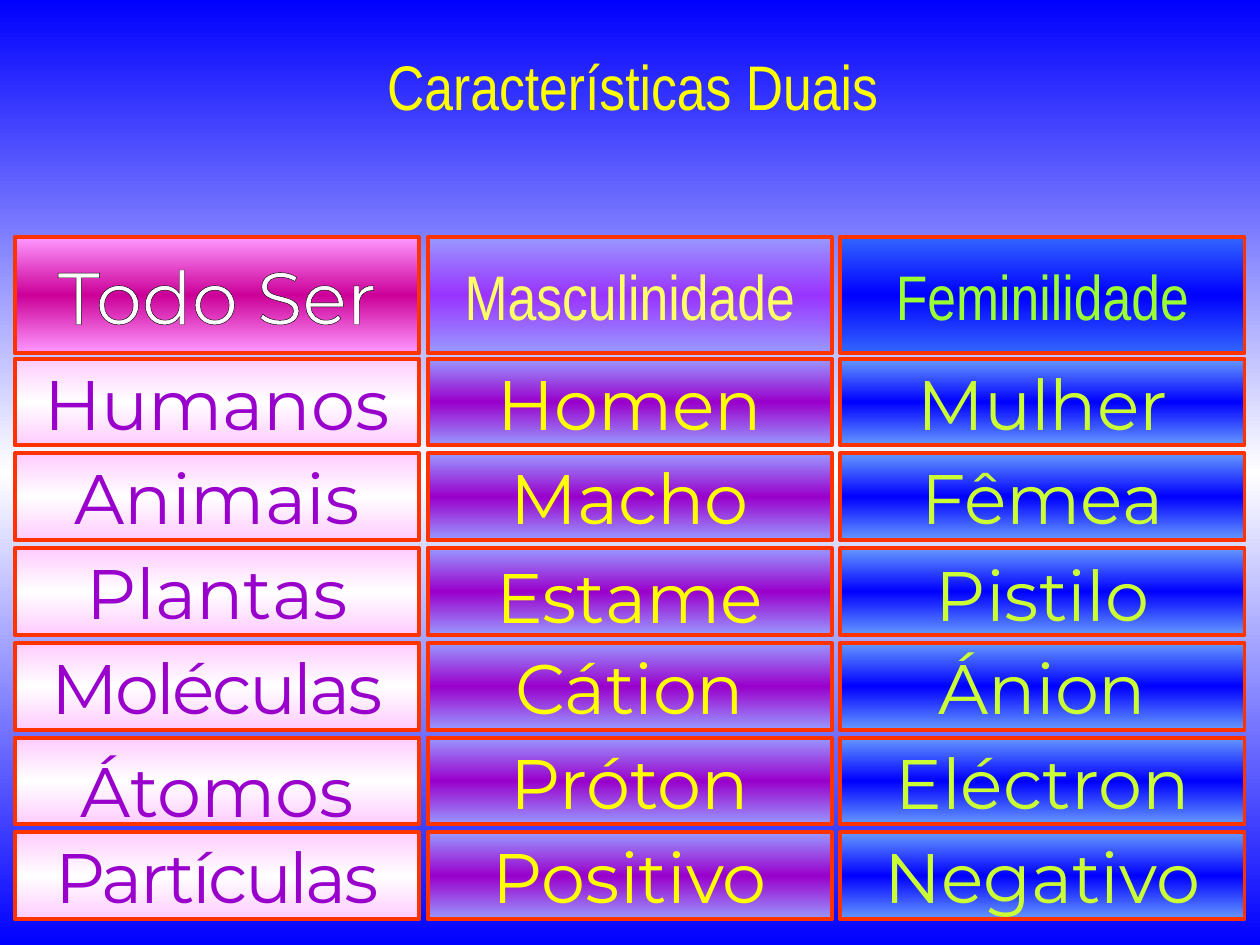
"""Build a slide with a table-like grid of dual characteristics."""
from copy import deepcopy
from pptx import Presentation
from pptx.dml.color import RGBColor as RGB
from pptx.enum.shapes import MSO_SHAPE as SHAPE
from pptx.enum.text import MSO_ANCHOR as ANCHOR, PP_ALIGN as ALIGN
from pptx.oxml import parse_xml
from pptx.oxml.ns import nsdecls, qn
from pptx.util import Cm, Pt

BLUE = RGB(0x00, 0x00, 0xFF)
NAVY = RGB(0x00, 0x00, 0x99)
WHITE = RGB(0xFF, 0xFF, 0xFF)
BLACK = RGB(0x00, 0x00, 0x00)
RED = RGB(0xFF, 0x33, 0x00)
ORANGE = RGB(0xFF, 0x99, 0x33)
YELLOW = RGB(0xFF, 0xFF, 0x00)
CREAM = RGB(0xFF, 0xFF, 0x66)
LIME = RGB(0xCC, 0xFF, 0x33)
GREEN = RGB(0x99, 0xFF, 0x33)
PURPLE = RGB(0x99, 0x00, 0xCC)
VIOLET = RGB(0x99, 0x33, 0xFF)
LILAC = RGB(0x99, 0x99, 0xFF)
BLUSH = RGB(0xFF, 0xCC, 0xFF)
PINK = RGB(0xFF, 0x99, 0xFF)
ROSE = RGB(0xCC, 0x00, 0x99)
SKY = RGB(0x66, 0x99, 0xFF)
ROYAL = RGB(0x33, 0x66, 0xFF)

SANS, SLIM = "Montserrat", "Arial Narrow"
HEADS = [
    ("Todo Ser", SANS, 42, WHITE, PINK, ROSE),
    ("Masculinidade", SLIM, 36, CREAM, LILAC, VIOLET),
    ("Feminilidade", SLIM, 36, GREEN, ROYAL, BLUE),
]
STYLES = [(PURPLE, BLUSH, WHITE), (YELLOW, LILAC, PURPLE), (LIME, SKY, BLUE)]
ROWS = [
    ("Humanos", "Homen", "Mulher"),
    ("Animais", "Macho", "Fêmea"),
    ("Plantas", "Estame", "Pistilo"),
    ("Moléculas", "Cátion", "Ánion"),
    ("Átomos", "Próton", "Eléctron"),
    ("Partículas", "Positivo", "Negativo"),
]
SPACING = {"Átomos": 1.2, "Estame": 1.1, "Pistilo": 1.05}
TIGHT = ("Moléculas", "Partículas")


def blend(fill, root, edge, core):
    fill.gradient()
    fill.gradient_angle = 270
    first = next(root.iter(qn("a:gs")))
    first.addnext(deepcopy(first))
    for stop, (pos, tint) in zip(fill.gradient_stops, [(0, edge), (0.5, core), (1, edge)]):
        stop.position = pos
        stop.color.rgb = tint


def write(box, text, face, size, ink, rim, width):
    frame = box.text_frame
    frame.text = text
    frame.word_wrap = False
    para = frame.paragraphs[0]
    para.alignment = ALIGN.CENTER
    run = para.runs[0]
    run.font.name = face
    run.font.size = Pt(size)
    run.font.color.rgb = ink
    run.font._element.insert(0, parse_xml(
        f'<a:ln {nsdecls("a")} w="{Pt(width)}"><a:solidFill>'
        f'<a:srgbClr val="{rim}"/></a:solidFill></a:ln>'))
    return para


deck = Presentation()
deck.slide_width, deck.slide_height = Cm(25.4), Cm(19.05)
slide = deck.slides.add_slide(deck.slide_layouts[6])
blend(slide.background.fill, slide.element, BLUE, WHITE)

cells = []
for col, head in enumerate(HEADS):
    cells.append((col, 4.78, 2.34, *head))
for row, words in enumerate(ROWS):
    for col, word in enumerate(words):
        cells.append((col, 7.23 + 1.91 * row, 1.75, word, SANS, 40, *STYLES[col]))

for col, top, tall, word, face, size, ink, edge, core in cells:
    box = slide.shapes.add_shape(
        SHAPE.RECTANGLE, Cm(0.3 + 8.32 * col), Cm(top), Cm(8.15), Cm(tall))
    box.shadow.inherit = False
    blend(box.fill, box.element, edge, core)
    box.line.color.rgb = RED
    box.line.width = Pt(2.25)
    para = write(box, word, face, size, ink, BLACK, 0.75)
    box.text_frame.vertical_anchor = ANCHOR.MIDDLE
    if word in SPACING:
        para.line_spacing = SPACING[word]
    if word in TIGHT:
        para.runs[0].font._element.set("spc", "-150")

title = slide.shapes.add_textbox(Cm(1.12), Cm(0.84), Cm(23.27), Cm(2.74))
para = write(title, "Características Duais", SLIM, 36, YELLOW, NAVY, 3)
fill = para.runs[0].font.fill
fill.gradient()
for stop, tint in zip(fill.gradient_stops, (YELLOW, ORANGE)):
    stop.color.rgb = tint
lin = next(title.element.iter(qn("a:lin")))
lin.getparent().replace(lin, parse_xml(
    f'<a:path {nsdecls("a")} path="rect">'
    '<a:fillToRect l="50000" t="50000" r="50000" b="50000"/></a:path>'))

deck.save("out.pptx")
